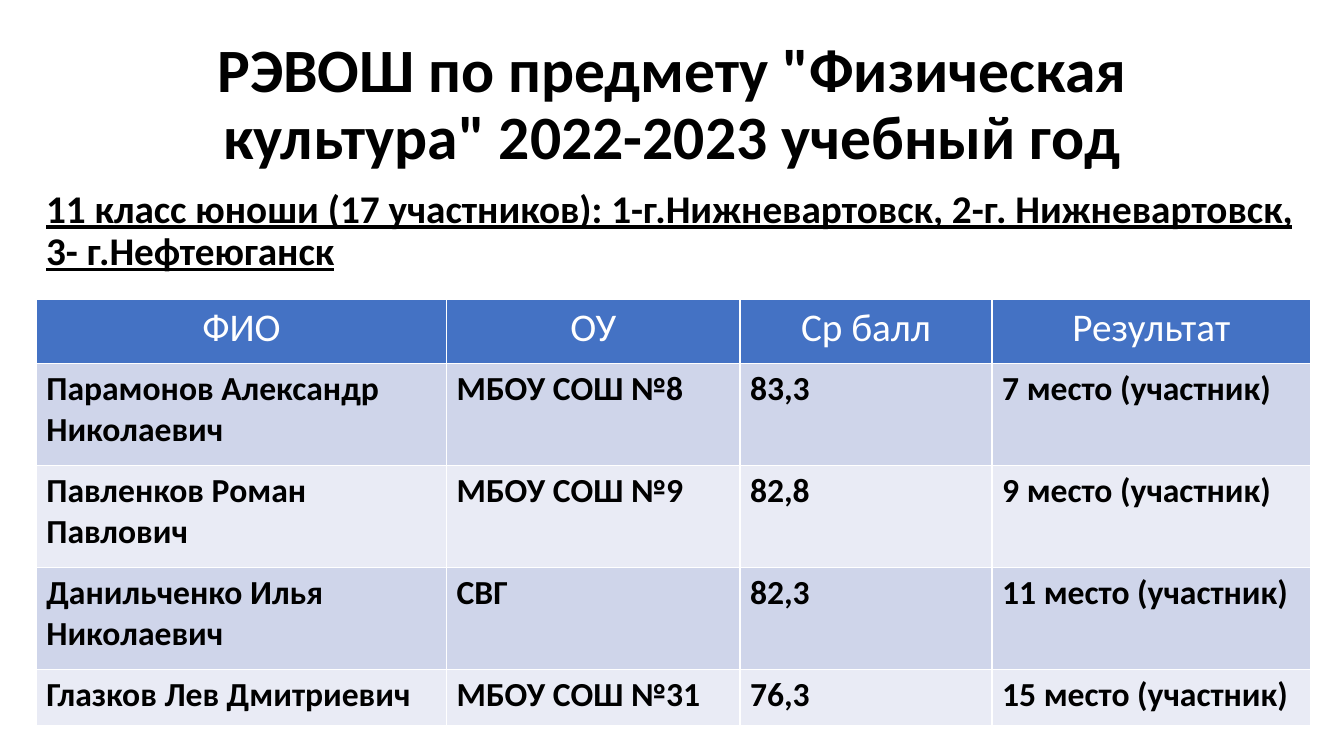
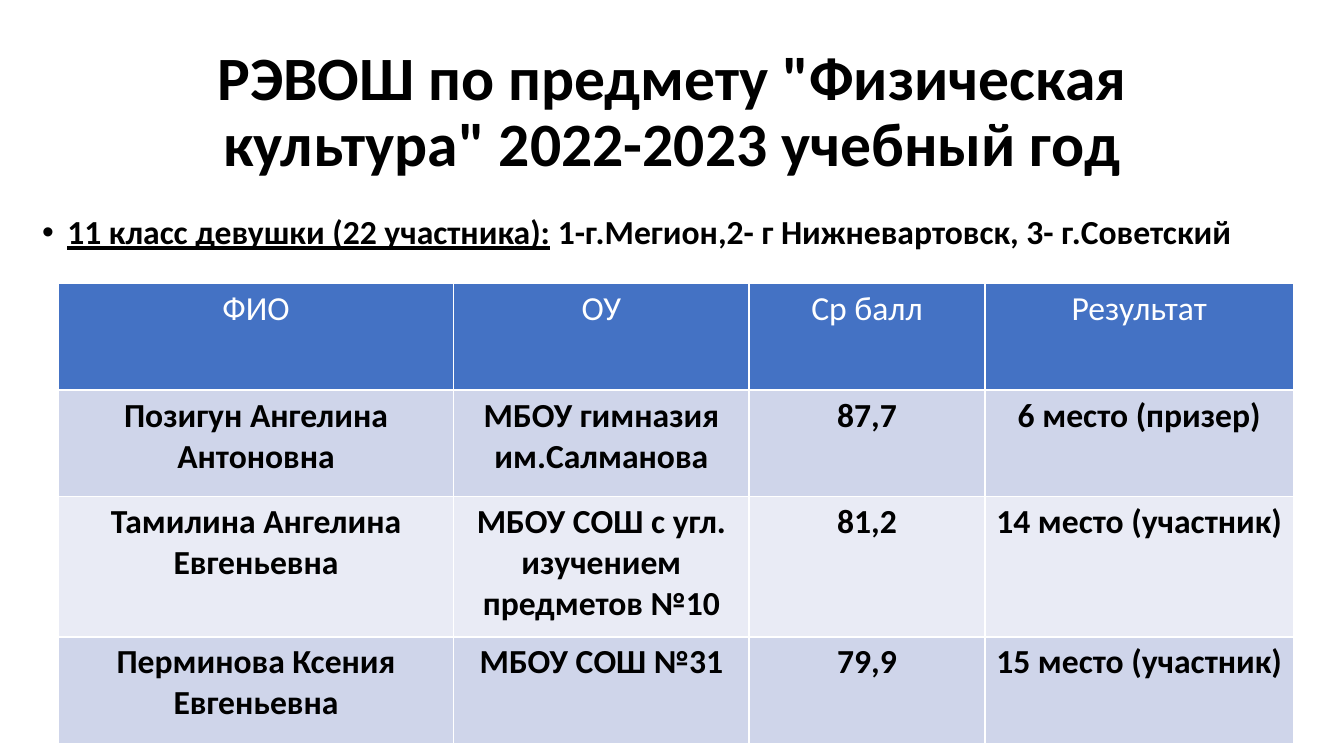
"""Build two slides with regional school olympiad results in physical education."""
from dataclasses import dataclass

from lxml import etree
from pptx import Presentation
from pptx.dml.color import RGBColor
from pptx.enum.text import MSO_ANCHOR, PP_ALIGN
from pptx.oxml.ns import qn
from pptx.util import Inches, Pt

LEFT = PP_ALIGN.LEFT
CENTER = PP_ALIGN.CENTER
MIDDLE = MSO_ANCHOR.MIDDLE
TOP = MSO_ANCHOR.TOP

BLACK = RGBColor(0x00, 0x00, 0x00)
WHITE = RGBColor(0xFF, 0xFF, 0xFF)
HEADER_BLUE = RGBColor(0x44, 0x72, 0xC4)
BANDS = (RGBColor(0xCF, 0xD5, 0xEA), RGBColor(0xE9, 0xEB, 0xF5))

FONT = "Calibri"
TITLE = 'РЭВОШ по предмету "Физическая культура" 2022-2023 учебный год'
HEADERS = ("ФИО", "ОУ", "Ср балл", "Результат")
BLANK_LAYOUT = 6
TITLE_SIZE = 44
BODY_SIZE = 24
LINE_SPACING = 0.9
BULLET_INDENT = Inches(0.25)


@dataclass(frozen=True)
class Box:
    left: float
    top: float
    width: float
    height: float


@dataclass(frozen=True)
class Segment:
    text: str
    underline: bool = False


@dataclass(frozen=True)
class Results:
    title_height: float
    summary_box: Box
    summary: tuple[Segment, ...]
    summary_size: int
    bulleted: bool
    table_left: float
    table_top: float
    column_widths: tuple[float, ...]
    row_heights: tuple[float, ...]
    header_size: int
    alignment: PP_ALIGN
    rows: tuple[tuple[str, ...], ...]


RESULTS = (
    Results(
        title_height=1.3,
        summary_box=Box(0.36, 1.83, 12.73, 1.0),
        summary=(
            Segment(
                "11 класс юноши (17 участников): 1-г.Нижневартовск, "
                "2-г. Нижневартовск, 3- г.Нефтеюганск",
                True,
            ),
        ),
        summary_size=28,
        bulleted=False,
        table_left=0.36,
        table_top=2.97,
        column_widths=(4.07, 2.91, 2.5, 3.16),
        row_heights=(0.64, 1.01, 1.01, 1.01, 0.56),
        header_size=28,
        alignment=LEFT,
        rows=(
            ("Парамонов Александр Николаевич", "МБОУ СОШ №8", "83,3", "7 место (участник)"),
            ("Павленков Роман Павлович", "МБОУ СОШ №9", "82,8", "9 место (участник)"),
            ("Данильченко Илья Николаевич", "СВГ", "82,3", "11 место (участник)"),
            ("Глазков Лев Дмитриевич", "МБОУ СОШ №31", "76,3", "15 место (участник)"),
        ),
    ),
    Results(
        title_height=1.45,
        summary_box=Box(0.32, 2.09, 12.84, 0.6),
        summary=(
            Segment("11 класс девушки (22 участника):", True),
            Segment(" 1-г.Мегион,2- г Нижневартовск, 3- г.Советский"),
        ),
        summary_size=24,
        bulleted=True,
        table_left=0.58,
        table_top=2.81,
        column_widths=(3.92, 2.93, 2.34, 3.06),
        row_heights=(1.06, 1.06, 1.39, 1.06),
        header_size=24,
        alignment=CENTER,
        rows=(
            ("Позигун Ангелина Антоновна", "МБОУ гимназия им.Салманова", "87,7", "6 место (призер)"),
            (
                "Тамилина Ангелина Евгеньевна",
                "МБОУ СОШ с угл. изучением предметов №10",
                "81,2",
                "14 место (участник)",
            ),
            ("Перминова Ксения Евгеньевна", "МБОУ СОШ №31", "79,9", "15 место (участник)"),
        ),
    ),
)


def format_run(run, size: int, color: RGBColor, bold: bool, underline: bool = False) -> None:
    run.font.name = FONT
    run.font.size = Pt(size)
    run.font.color.rgb = color
    run.font.bold = bold
    run.font.underline = underline


def add_text(slide, box: Box, segments: tuple[Segment, ...], size: int, alignment: PP_ALIGN, anchor: MSO_ANCHOR):
    shape = slide.shapes.add_textbox(
        Inches(box.left), Inches(box.top), Inches(box.width), Inches(box.height)
    )
    text_frame = shape.text_frame
    text_frame.word_wrap = True
    text_frame.vertical_anchor = anchor
    paragraph = text_frame.paragraphs[0]
    paragraph.alignment = alignment
    paragraph.line_spacing = LINE_SPACING
    for segment in segments:
        run = paragraph.add_run()
        run.text = segment.text
        format_run(run, size, BLACK, True, segment.underline)
    return paragraph


def add_bullet(paragraph) -> None:
    properties = paragraph._p.get_or_add_pPr()
    properties.set("marL", str(BULLET_INDENT))
    properties.set("indent", str(-BULLET_INDENT))
    etree.SubElement(properties, qn("a:buFont")).set("typeface", "Arial")
    etree.SubElement(properties, qn("a:buChar")).set("char", "•")


def fill_cell(cell, text: str, fill: RGBColor, size: int, color: RGBColor, bold: bool, alignment: PP_ALIGN) -> None:
    cell.fill.solid()
    cell.fill.fore_color.rgb = fill
    cell.text_frame.text = text
    paragraph = cell.text_frame.paragraphs[0]
    paragraph.alignment = alignment
    format_run(paragraph.runs[0], size, color, bold)


def add_results_table(slide, results: Results) -> None:
    table = slide.shapes.add_table(
        len(results.row_heights),
        len(results.column_widths),
        Inches(results.table_left),
        Inches(results.table_top),
        Inches(sum(results.column_widths)),
        Inches(sum(results.row_heights)),
    ).table
    for column, width in zip(table.columns, results.column_widths):
        column.width = Inches(width)
    for row, height in zip(table.rows, results.row_heights):
        row.height = Inches(height)
    for column_index, header in enumerate(HEADERS):
        fill_cell(
            table.cell(0, column_index), header, HEADER_BLUE, results.header_size, WHITE, False, CENTER
        )
    for row_index, values in enumerate(results.rows):
        band = BANDS[row_index % len(BANDS)]
        for column_index, value in enumerate(values):
            cell = table.cell(row_index + 1, column_index)
            fill_cell(cell, value, band, BODY_SIZE, BLACK, True, results.alignment)


def add_results_slide(presentation, results: Results) -> None:
    slide = presentation.slides.add_slide(presentation.slide_layouts[BLANK_LAYOUT])
    title_box = Box(0.92, 0.4, 11.5, results.title_height)
    add_text(slide, title_box, (Segment(TITLE),), TITLE_SIZE, CENTER, MIDDLE)
    summary = add_text(slide, results.summary_box, results.summary, results.summary_size, LEFT, TOP)
    if results.bulleted:
        add_bullet(summary)
    add_results_table(slide, results)


def main() -> None:
    presentation = Presentation()
    presentation.slide_width = Inches(13.33)
    presentation.slide_height = Inches(7.5)
    for results in RESULTS:
        add_results_slide(presentation, results)
    presentation.save("out.pptx")


if __name__ == "__main__":
    main()
